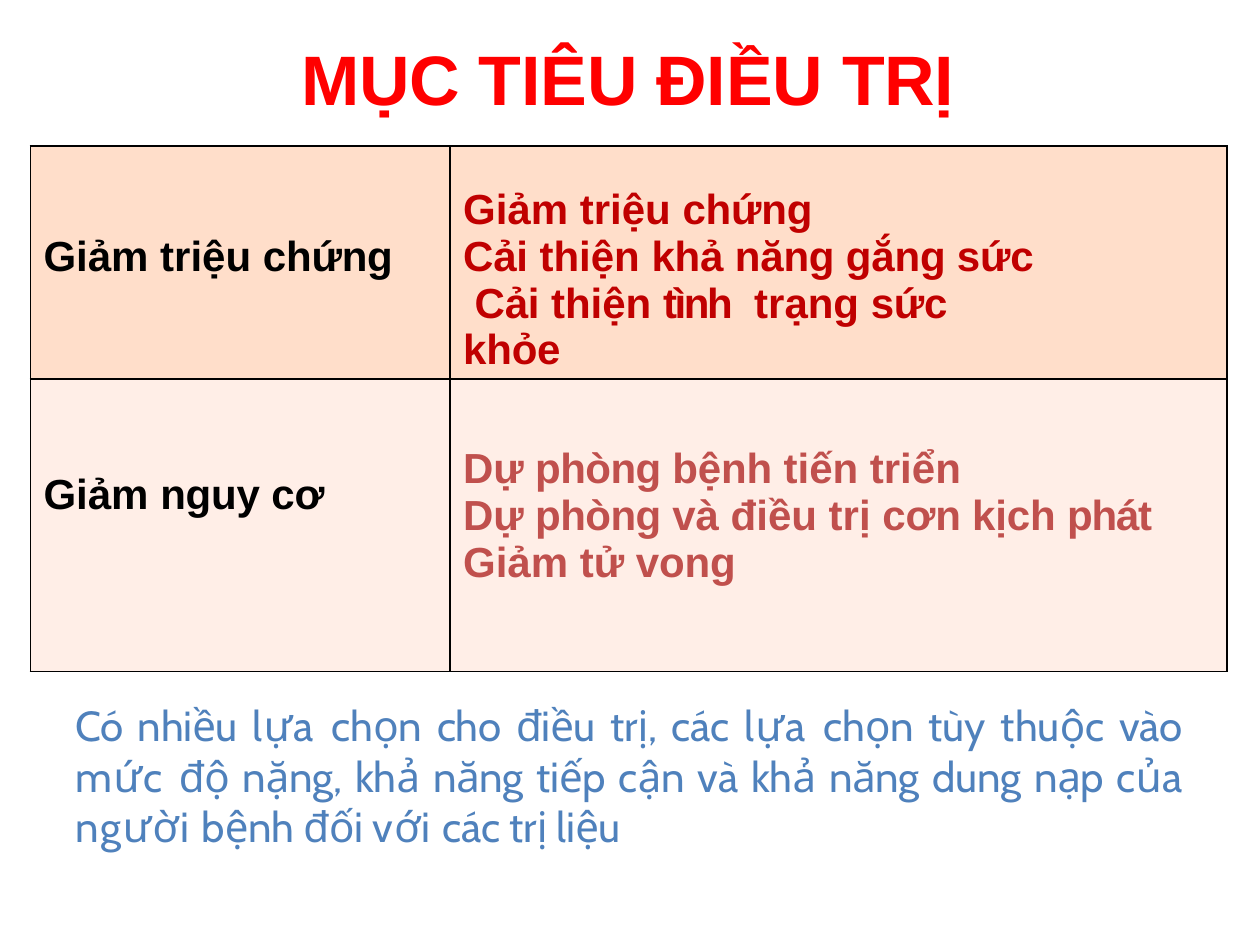
import pptx
import pptx.dml.color
import pptx.enum.text
import pptx.oxml.ns
import pptx.util
from lxml import etree

Pt = pptx.util.Pt
ALIGN = pptx.enum.text.PP_ALIGN
BLACK, RED, DARK_RED, BRICK, BLUE = "000000", "FF0000", "C00000", "C0504D", "4F81BC"
PEACH, PALE_PEACH = "FFDECA", "FFEEE7"
BREAK = ("\n", 0)

SYMPTOM_LABEL = [[("Giảm triệu ", 0), ("chứng", -0.1)]]
SYMPTOM_GOALS = [
    [("Giảm triệu ", 0), ("chứng", -0.1)],
    [("Cải ", -0.1), ("thiện ", 0), ("khả năng gắng sức", -0.1), BREAK,
     (" Cải ", -0.1), ("thiện ", 0), ("tình\t", -1.4), ("trạng ", 0),
     ("sức", -0.1), BREAK, ("khỏe", -0.1)],
]
RISK_LABEL = [[("Giảm ", 0), ("nguy cơ", -0.1)]]
RISK_GOALS = [
    [("Dự ", -0.1), ("phòng ", -0.3), ("bệnh ", -0.1), ("tiến triển", 0)],
    [("Dự ", -0.1), ("phòng ", -0.3), ("và điều trị ", 0), ("cơn kịch ", -0.1), ("phát", -0.7)],
    [("Giảm tử ", 0), ("vong", -0.1)],
]
ROWS = [
    (133.2, PEACH, [(SYMPTOM_LABEL, BLACK, 50), (SYMPTOM_GOALS, DARK_RED, 23)]),
    (167, PALE_PEACH, [(RISK_LABEL, BLACK, 53), (RISK_GOALS, BRICK, 38)]),
]
SUMMARY = [[
    ("Có nhiều ", -0.1), ("lựa ", 0.8), ("chọn ", 0), ("cho điều trị, các ", -0.1),
    ("lựa ", 0.8), ("chọn tùy thuộc ", 0), ("vào ", -0.1), ("mức ", 0.9),
    ("độ nặng, ", -0.1), ("khả ", 0), ("năng tiếp ", -0.1), ("cận ", 0), ("và ", -0.1),
    ("khả ", 0), ("năng dung nạp ", -0.1), ("của ", 0), ("người ", 0.9),
    ("bệnh đối ", -0.1), ("với ", 0.8), ("các trị liệu", -0.1),
]]


def color(value):
    return pptx.dml.color.RGBColor.from_string(value)


class SlideBuilder:
    """Holds the text style and the current slide, and adds its elements."""

    font = "Arial"
    tab_stop = 166.3

    def __init__(self, page):
        self.page = page

    def add_runs(self, frame, paragraphs, size, ink, font=font, bold=True, align=ALIGN.LEFT):
        for index, runs in enumerate(paragraphs):
            para = frame.add_paragraph() if index else frame.paragraphs[0]
            para.alignment = align
            para.space_before = Pt(0)
            for text, spacing in runs:
                if text == "\n":
                    para.add_line_break()
                    continue
                span = para.add_run()
                span.text = text
                span.font.name = font
                span.font.size = Pt(size)
                span.font.bold = bold
                span.font.color.rgb = color(ink)
                span.font._element.set("spc", str(round(spacing * 100)))
            if any("\t" in text for text, _ in runs):
                self.add_tab(para)

    def add_tab(self, para):
        properties = para._p.get_or_add_pPr()
        tabs = etree.SubElement(properties, pptx.oxml.ns.qn("a:tabLst"))
        etree.SubElement(tabs, pptx.oxml.ns.qn("a:tab"), pos=str(Pt(self.tab_stop)), algn="l")

    def prepare(self, frame, top):
        frame.word_wrap = True
        frame.auto_size = pptx.enum.text.MSO_AUTO_SIZE.NONE
        frame.vertical_anchor = pptx.enum.text.MSO_ANCHOR.TOP
        frame.margin_left = frame.margin_right = frame.margin_bottom = 0
        frame.margin_top = Pt(top)

    def title(self, text, left, top, width, height):
        box = self.page.shapes.title
        box.left, box.top, box.width, box.height = map(Pt, (left, top, width, height))
        self.prepare(box.text_frame, 1.7)
        self.add_runs(box.text_frame, [[(text, -0.1)]], 40, RED)

    def text(self, paragraphs, left, top, width, height):
        box = self.page.shapes.add_textbox(*map(Pt, (left, top, width, height)))
        self.prepare(box.text_frame, 1.7)
        self.add_runs(box.text_frame, paragraphs, 24, BLUE, "Cabin", False, ALIGN.JUSTIFY)

    def border(self, cell):
        properties = cell._tc.get_or_add_tcPr()
        for side in ("lnL", "lnR", "lnT", "lnB"):
            line = etree.SubElement(properties, pptx.oxml.ns.qn("a:" + side), w=str(Pt(1)))
            fill = etree.SubElement(line, pptx.oxml.ns.qn("a:solidFill"))
            etree.SubElement(fill, pptx.oxml.ns.qn("a:srgbClr"), val=BLACK)

    def table(self, rows, widths, left, top):
        height = sum(row[0] for row in rows)
        area = map(Pt, (left, top, sum(widths), height))
        grid = self.page.shapes.add_table(len(rows), len(widths), *area).table
        grid.first_row = grid.horz_banding = False
        for column, width in zip(grid.columns, widths):
            column.width = Pt(width)
        for row, (row_height, fill, entries) in zip(grid.rows, rows):
            row.height = Pt(row_height)
            for cell, (paragraphs, ink, inset) in zip(row.cells, entries):
                cell.margin_left, cell.margin_top = Pt(7.6), Pt(inset)
                cell.margin_right = cell.margin_bottom = 0
                self.border(cell)
                cell.fill.solid()
                cell.fill.fore_color.rgb = color(fill)
                self.add_runs(cell.text_frame, paragraphs, 24, ink)


def main():
    deck = pptx.Presentation()
    deck.slide_width, deck.slide_height = Pt(720), Pt(540)
    builder = SlideBuilder(deck.slides.add_slide(deck.slide_layouts[5]))
    builder.table(ROWS, [239.8, 444.2], 17.3, 83.5)
    builder.text(SUMMARY, 43, 398.2, 632.5, 88.6)
    builder.title("MỤC TIÊU ĐIỀU TRỊ", 172, 18.7, 377, 49.7)
    deck.save("out.pptx")


if __name__ == "__main__":
    main()
